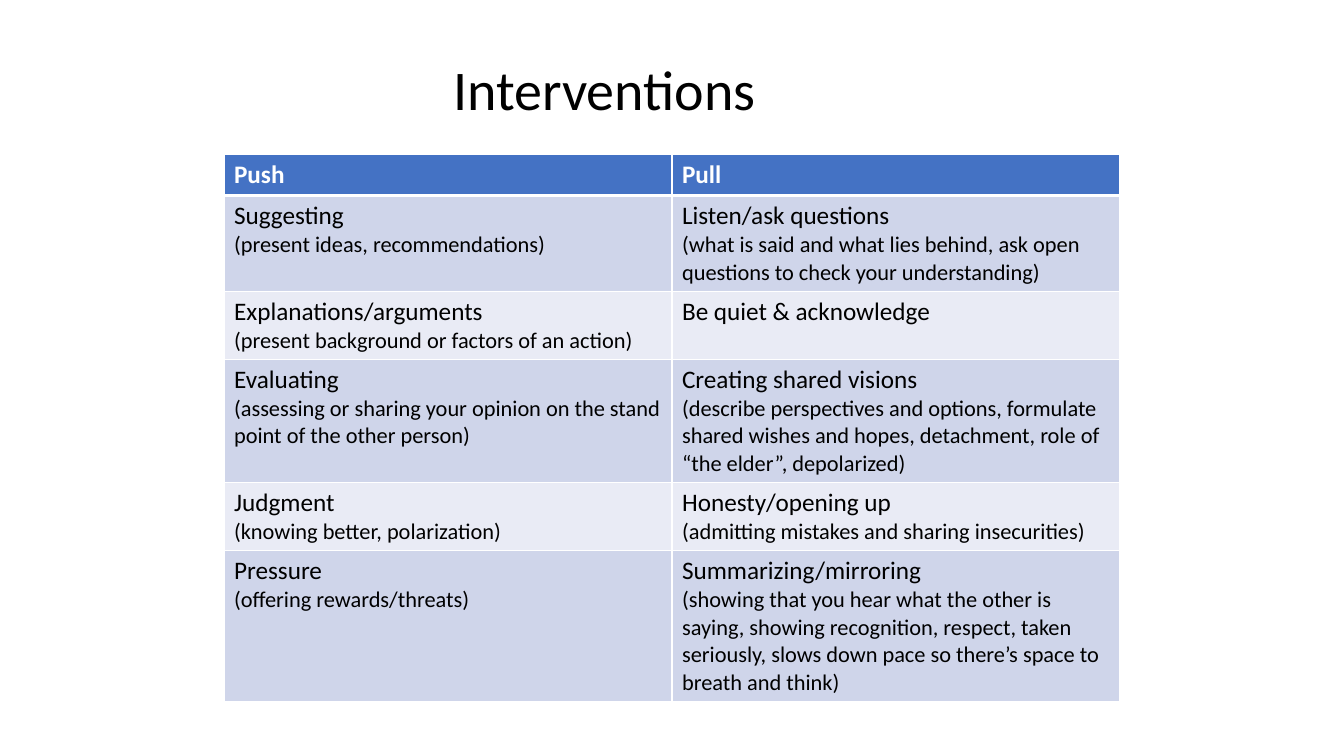
from dataclasses import dataclass

from lxml import etree
from pptx import Presentation
from pptx.dml.color import RGBColor
from pptx.oxml.ns import qn
from pptx.util import Inches, Pt

WIDE, HIGH = 13.33, 7.5


@dataclass(frozen=True)
class Theme:
    font: str = "Calibri"
    ink: str = "000000"
    white: str = "FFFFFF"
    head: str = "4472C4"
    bands: tuple = ("CFD5EA", "E9EBF5")
    title: int = 40
    term: int = 18
    note: int = 16
    rule: int = 1
    thick: int = 3


THEME = Theme()
HEADS = ("Push", "Pull")
PAIRS = [
    (("Suggesting", "(present ideas, recommendations)"),
     ("Listen/ask questions",
      "(what is said and what lies behind, ask open questions to check your understanding)")),
    (("Explanations/arguments", "(present background or factors of an action)"),
     ("Be quiet & acknowledge",)),
    (("Evaluating",
      "(assessing or sharing your opinion on the stand point of the other person)"),
     ("Creating shared visions",
      "(describe perspectives and options, formulate shared wishes and hopes, "
      "detachment, role of “the elder”, depolarized)")),
    (("Judgment", "(knowing better, polarization)"),
     ("Honesty/opening up", "(admitting mistakes and sharing insecurities)")),
    (("Pressure", "(offering rewards/threats)"),
     ("Summarizing/mirroring",
      "(showing that you hear what the other is saying, showing recognition, respect, "
      "taken seriously, slows down pace so there’s space to breath and think)")),
]


def write(frame, lines, sizes, color=THEME.ink, bold=False):
    """Fill a text frame with one paragraph per line, each with its own size."""
    for i, (line, size) in enumerate(zip(lines, sizes)):
        para = frame.add_paragraph() if i else frame.paragraphs[0]
        run = para.add_run()
        run.text = line
        font = run.font
        font.name, font.size, font.bold = THEME.font, Pt(size), bold
        font.color.rgb = RGBColor.from_string(color)


def edge(cell, base):
    """Draw white borders round a cell, with the given bottom width."""
    props = cell._tc.get_or_add_tcPr()
    widths = {"a:lnL": THEME.rule, "a:lnR": THEME.rule,
              "a:lnT": THEME.rule, "a:lnB": base}
    for i, (tag, width) in enumerate(widths.items()):
        line = etree.Element(qn(tag), w=str(Pt(width)))
        fill = etree.SubElement(line, qn("a:solidFill"))
        etree.SubElement(fill, qn("a:srgbClr"), val=THEME.white)
        props.insert(i, line)


def paint(cell, color, base=THEME.rule):
    cell.fill.solid()
    cell.fill.fore_color.rgb = RGBColor.from_string(color)
    edge(cell, base)


def title(slide, box, text):
    frame = slide.shapes.add_textbox(*box).text_frame
    frame.word_wrap = True
    write(frame, [text], [THEME.title])


def grid(slide, box, row):
    """Place the table in its box; rows grow from the given least height."""
    shape = slide.shapes.add_table(len(PAIRS) + 1, len(HEADS), *box)
    table = shape.table
    for line in table.rows:
        line.height = row
    shape.height = box[3]
    for col, text in enumerate(HEADS):
        cell = table.cell(0, col)
        write(cell.text_frame, [text], [THEME.term], color=THEME.white, bold=True)
        paint(cell, THEME.head, THEME.thick)
    for r, pair in enumerate(PAIRS):
        for col, lines in enumerate(pair):
            cell = table.cell(r + 1, col)
            write(cell.text_frame, lines, [THEME.term, THEME.note])
            paint(cell, THEME.bands[r % 2])
            if r == 0:
                top = cell._tc.tcPr.find(qn("a:lnT"))
                top.set("w", str(Pt(THEME.thick)))


def area(left, top, width, height):
    """Turn shares of the slide into a box."""
    return (Inches(left * WIDE), Inches(top * HIGH),
            Inches(width * WIDE), Inches(height * HIGH))


def main():
    deck = Presentation()
    deck.slide_width, deck.slide_height = Inches(WIDE), Inches(HIGH)
    slide = deck.slides.add_slide(deck.slide_layouts[6])
    grid(slide, area(1 / 6, 0.204, 2 / 3, 0.712), Inches(0.41))
    title(slide, area(0.33, 0.065, 0.34, 0.193), "Interventions")
    deck.save("out.pptx")


if __name__ == "__main__":
    main()
